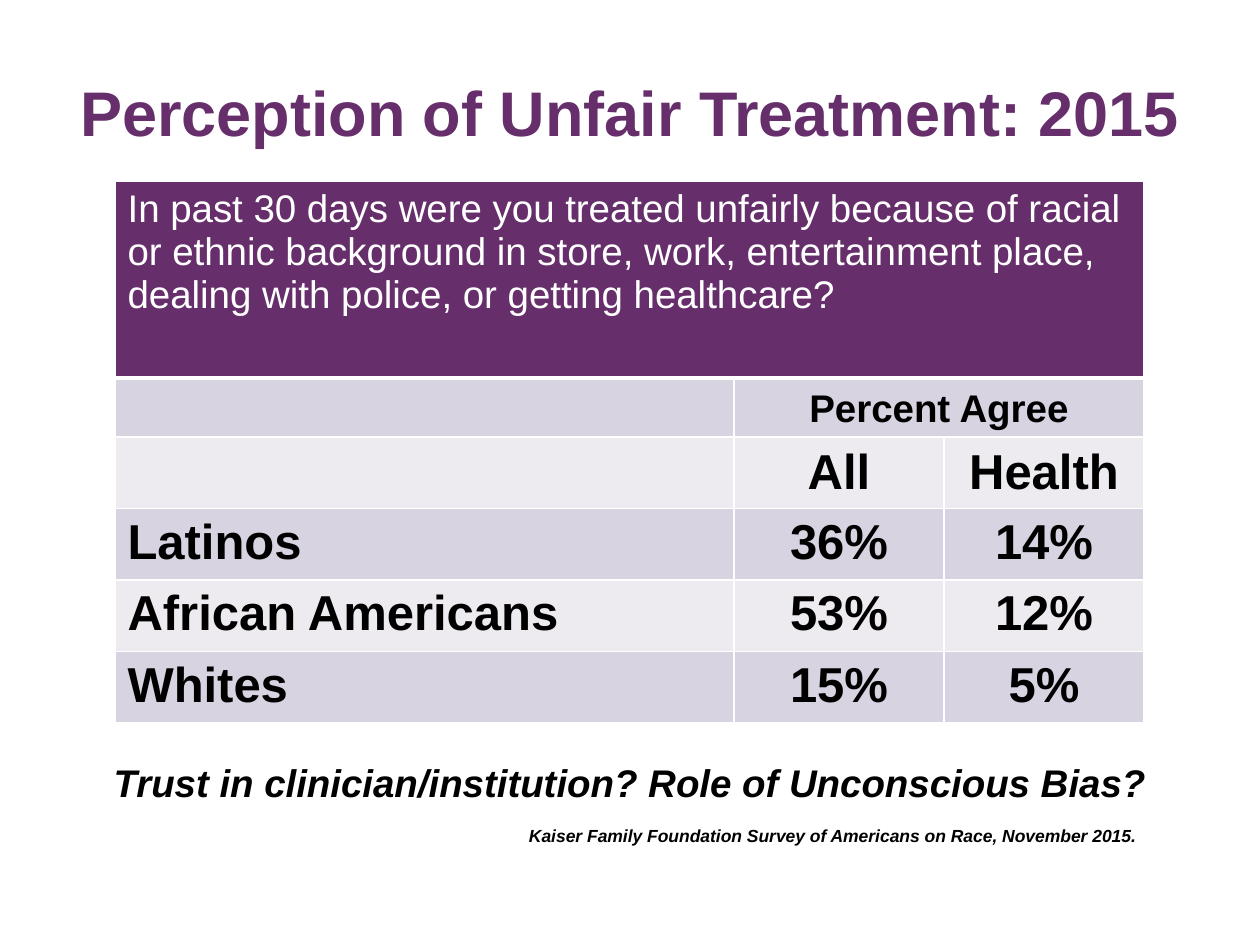
from lxml.etree import SubElement
from pptx import Presentation
from pptx.dml.color import RGBColor as RGB
from pptx.enum.text import MSO_ANCHOR as Anchor, PP_ALIGN as Align
from pptx.oxml.ns import qn
from pptx.util import Pt

PX = 914400 / 126
INK = {"plum": "662E6B", "dark": "D8D3E0", "light": "EDEAF0",
       "white": "FFFFFF", "black": "000000"}

TITLE = "Perception of Unfair Treatment: 2015"
ASK = ("In past 30 days were you treated unfairly because of racial or ethnic "
       "background in store, work, entertainment place, dealing with police, "
       "or getting healthcare?")
ROWS = [
    (ASK, "", ""),
    ("", "Percent Agree", ""),
    ("", "All", "Health"),
    ("Latinos", "36%", "14%"),
    ("African Americans", "53%", "12%"),
    ("Whites", "15%", "5%"),
]
COLS = [619, 210, 200]
TALL = [197, 59, 71, 71, 71, 71]
SIZES = [22, 22, 28, 28, 28, 28]
ANCHORS = [Anchor.TOP, Anchor.BOTTOM, Anchor.MIDDLE] + [Anchor.TOP] * 3
NOTES = [  # text, box, size, alignment
    ("Kaiser Family Foundation Survey of Americans on Race, November 2015.",
     (509, 819, 639, 34), 10, Align.RIGHT),
    ("Trust in clinician/institution? Role of Unconscious Bias?",
     (89, 753, 1082, 59), 22, Align.CENTER),
]


def px(*nums):
    return [round(n * PX) for n in nums]


def write(frame, text, size, align, ink="black", bold=True, italic=False):
    para = frame.paragraphs[0]
    para.text = text
    para.alignment = align
    font = para.font
    font.name, font.size = "Arial", Pt(size)
    font.bold, font.italic = bold, italic
    font.color.rgb = RGB.from_string(INK[ink])


def edge(cell, base):
    """Draw white cell borders, 1 pt except for the given bottom width."""
    props = cell._tc.get_or_add_tcPr()
    for side, wide in (("L", 1), ("R", 1), ("T", 1), ("B", base)):
        line = SubElement(props, qn(f"a:ln{side}"), w=str(Pt(wide)))
        fill = SubElement(line, qn("a:solidFill"))
        SubElement(fill, qn("a:srgbClr"), val=INK["white"])


def add_grid(slide):
    box = px(115, 181, sum(COLS), sum(TALL))
    grid = slide.shapes.add_table(len(ROWS), len(COLS), *box).table
    for col, wide in zip(grid.columns, px(*COLS)):
        col.width = wide
    for row, tall in zip(grid.rows, px(*TALL)):
        row.height = tall
    for r, texts in enumerate(ROWS):
        back = "plum" if r == 0 else "dark" if r % 2 else "light"
        for c, text in enumerate(texts):
            cell = grid.cell(r, c)
            edge(cell, 1 if r else 3)
            cell.fill.solid()
            cell.fill.fore_color.rgb = RGB.from_string(INK[back])
            cell.vertical_anchor = ANCHORS[r]
            if text:
                write(cell.text_frame, text, SIZES[r],
                      Align.CENTER if c else Align.LEFT,
                      "black" if r else "white", r > 0)
    grid.cell(0, 0).merge(grid.cell(0, 2))
    grid.cell(1, 1).merge(grid.cell(1, 2))


def main():
    deck = Presentation()
    deck.slide_width, deck.slide_height = px(1260, 945)
    slide = deck.slides.add_slide(deck.slide_layouts[5])

    title = slide.shapes.title
    title.left, title.top, title.width, title.height = px(63, 38, 1134, 111)
    frame = title.text_frame
    frame.margin_left = frame.margin_right = 0
    frame.margin_top = frame.margin_bottom = 0
    frame.vertical_anchor = Anchor.BOTTOM
    write(frame, TITLE, 36, Align.CENTER, "plum")

    for text, box, size, align in NOTES:
        frame = slide.shapes.add_textbox(*px(*box)).text_frame
        frame.word_wrap = True
        write(frame, text, size, align, italic=True)
    add_grid(slide)
    deck.save("out.pptx")


if __name__ == "__main__":
    main()
